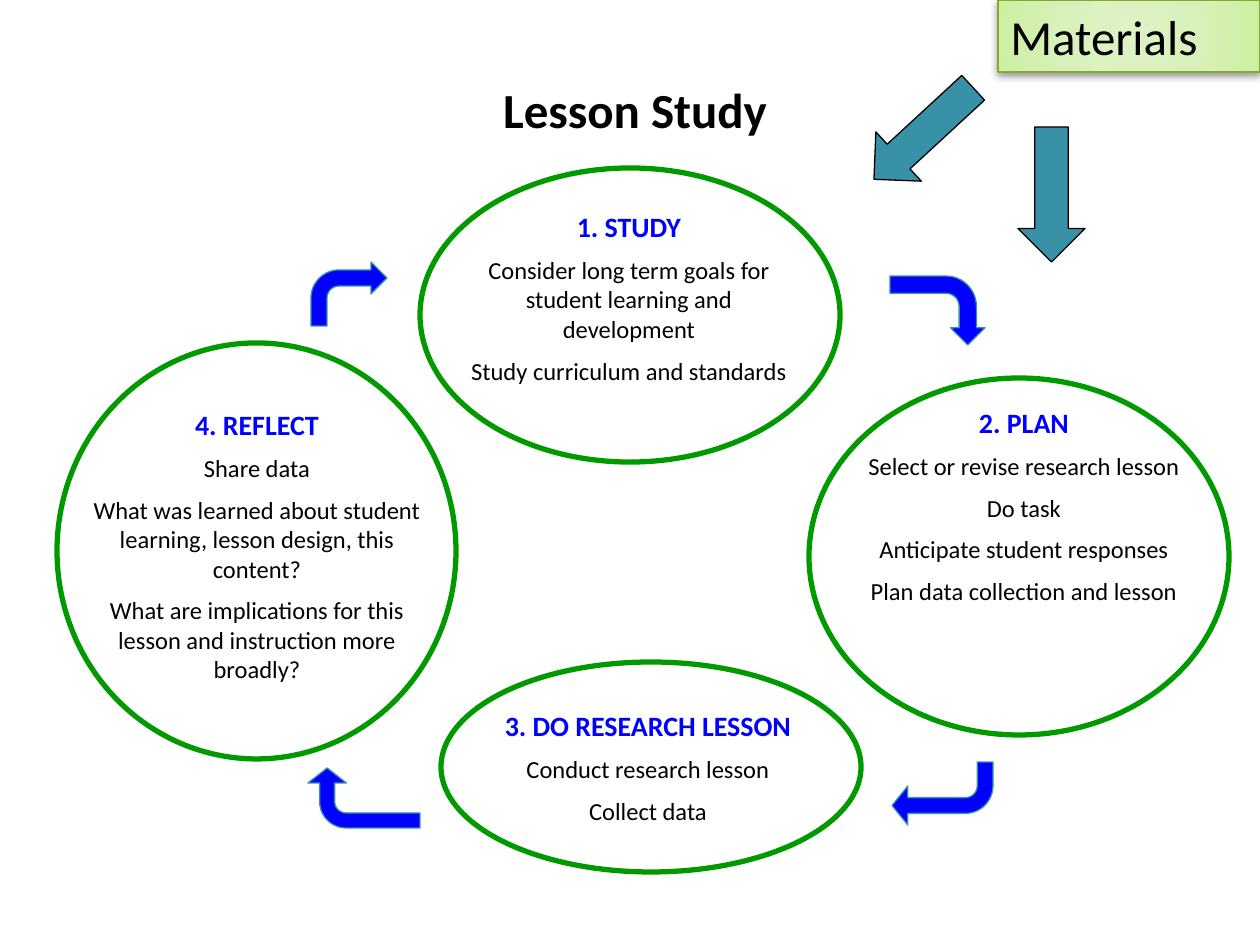
from pptx import Presentation
from pptx.dml.color import RGBColor
from pptx.enum.shapes import MSO_SHAPE as SHAPE
from pptx.enum.text import MSO_ANCHOR, PP_ALIGN
from pptx.oxml import parse_xml
from pptx.oxml.ns import nsdecls, qn
from pptx.util import Emu, Inches, Pt

BLACK = RGBColor(0x00, 0x00, 0x00)
BLUE = RGBColor(0x00, 0x00, 0xFF)
GREEN = RGBColor(0x00, 0x99, 0x00)
TEAL = RGBColor(0x38, 0x91, 0xA7)
OLIVE = RGBColor(0x84, 0xAA, 0x33)
GLOW = [(0, "DFF3C7"), (50, "D8F1BA"), (97, "CDEFA2"), (100, "CAF199")]

TITLE = ("Lesson Study", (189, 73, 892, 72))
LABEL = ("Materials", (998, 0, 262, 72))
# heading, lines, text box, ellipse
STEPS = [
    ("1. STUDY",
     ["Consider long term goals for student learning and development",
      "Study curriculum and standards"],
     (445, 203, 368, 195), (420, 168, 420, 294)),
    ("2. PLAN",
     ["Select or revise research lesson", "Do task",
      "Anticipate student responses", "Plan data collection and lesson"],
     (840, 399, 368, 270), (809, 378, 420, 357)),
    ("3. DO RESEARCH LESSON",
     ["Conduct research lesson", "Collect data"],
     (464, 702, 368, 180), (441, 662, 420, 210)),
    ("4. REFLECT",
     ["Share data",
      "What was learned about student learning, lesson design, this content?",
      "What are implications for this lesson and instruction more broadly?"],
     (73, 401, 368, 299), (57, 343, 399, 416)),
]
BENDS = [
    ((311, 262, 76, 64), 0, (0.25, 0.25, 0.25, 0.44)),
    ((903, 263, 69, 95), 90, (0.25, 0.25, 0.25, 0.44)),
    ((892, 762, 101, 63), 180, (0.25, 0.31, 0.25, 0.44)),
    ((334, 742, 60, 112), 270, (0.25, 0.32, 0.25, 0.44)),
]
MATERIAL_ARROWS = [((856, 100, 135, 67), 137.3), ((984, 161, 135, 67), 90)]


def px(box):
    """Turn pixel lengths into EMU."""
    return [Emu(round(v * 914400 / 126)) for v in box]


def write(p, text, size, color=BLACK, bold=False, align=PP_ALIGN.CENTER):
    """Add one run to a paragraph."""
    p.alignment = align
    r = p.add_run()
    r.text = text
    r.font.name, r.font.size, r.font.bold = "Calibri", Pt(size), bold
    r.font.color.rgb = color


def add_text(s, box):
    """Add a wrapping text box and return its frame."""
    tf = s.shapes.add_textbox(*px(box)).text_frame
    tf.word_wrap = True
    return tf


def add_shape(s, kind, box, line, width=0.75, fill=None, turn=0, adjust=()):
    """Add a preset shape without shadow."""
    sp = s.shapes.add_shape(kind, *px(box))
    sp.shadow.inherit = False
    sp.rotation = turn
    sp.line.color.rgb, sp.line.width = line, Pt(width)
    if fill is None:
        sp.fill.background()
    else:
        sp.fill.solid()
        sp.fill.fore_color.rgb = fill
    for i, value in enumerate(adjust):
        sp.adjustments[i] = value
    return sp


def add_glow(sp):
    """Give a shape a radial gradient and a soft shadow below."""
    props = sp.element.spPr
    stops = "".join(f'<a:gs pos="{pos * 1000}"><a:srgbClr val="{color}"/></a:gs>'
                    for pos, color in GLOW)
    props.replace(props.find(qn("a:noFill")), parse_xml(
        f'<a:gradFill {nsdecls("a")} rotWithShape="1"><a:gsLst>{stops}</a:gsLst>'
        '<a:path path="circle"><a:fillToRect l="50000" t="50000" r="50000" b="50000"/>'
        '</a:path></a:gradFill>'))
    props.find(qn("a:effectLst")).append(parse_xml(
        f'<a:outerShdw {nsdecls("a")} blurRad="{Pt(5)}" dist="{Pt(2)}" dir="5400000" '
        'rotWithShape="0"><a:srgbClr val="000000"><a:alpha val="43000"/></a:srgbClr>'
        '</a:outerShdw>'))


def main():
    """Build the lesson study cycle."""
    prs = Presentation()
    prs.slide_width, prs.slide_height = Inches(10), Inches(7.5)
    s = prs.slides.add_slide(prs.slide_layouts[6])

    title, box = TITLE
    write(add_text(s, box).paragraphs[0], title, 28, bold=True)
    for heading, lines, box, _ in STEPS:
        tf = add_text(s, box)
        write(tf.paragraphs[0], heading, 16, BLUE, True)
        for line in lines:
            p = tf.add_paragraph()
            p.space_before = Pt(7)
            write(p, line, 14)
    for *_, ellipse in STEPS:
        add_shape(s, SHAPE.OVAL, ellipse, GREEN, 3)
    for box, turn, adjust in BENDS:
        add_shape(s, SHAPE.BENT_ARROW, box, TEAL, fill=BLUE, turn=turn, adjust=adjust)
    for box, turn in MATERIAL_ARROWS:
        add_shape(s, SHAPE.RIGHT_ARROW, box, BLACK, fill=TEAL, turn=turn)

    label, box = LABEL
    sp = add_shape(s, SHAPE.RECTANGLE, box, OLIVE)
    add_glow(sp)
    tf = sp.text_frame
    tf.word_wrap, tf.vertical_anchor = True, MSO_ANCHOR.TOP
    write(tf.paragraphs[0], label, 28, align=PP_ALIGN.LEFT)
    prs.save("out.pptx")


if __name__ == "__main__":
    main()
